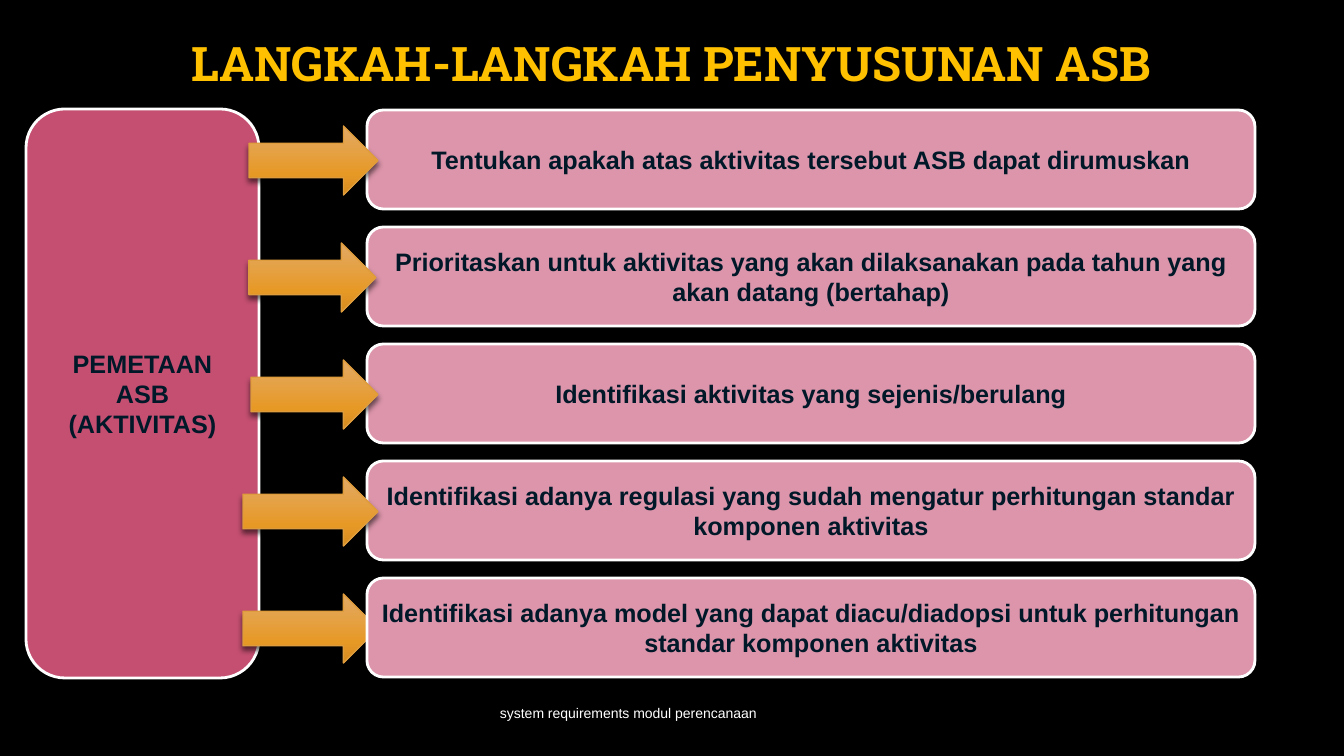
from copy import deepcopy

from pptx import Presentation
from pptx.dml.color import RGBColor
from pptx.enum.shapes import MSO_SHAPE
from pptx.enum.text import MSO_ANCHOR, PP_ALIGN
from pptx.oxml import parse_xml
from pptx.oxml.ns import nsdecls, qn
from pptx.util import Emu, Pt

SLIDE_WIDTH, SLIDE_HEIGHT = 1344, 756
EMU_PER_PX = 12192000 / SLIDE_WIDTH

BLACK = RGBColor(0x00, 0x00, 0x00)
WHITE = RGBColor(0xFF, 0xFF, 0xFF)
GOLD = RGBColor(0xFF, 0xC0, 0x00)
NAVY = RGBColor(0x01, 0x18, 0x29)
ROSE = RGBColor(0xC5, 0x4F, 0x71)
PINK = RGBColor(0xDC, 0x95, 0xAA)
ARROW_EDGE = RGBColor(0xDE, 0x9C, 0x3C)
ARROW_STOPS = [
    (0, RGBColor(0xE2, 0xAA, 0x66)),
    (0.69, RGBColor(0xE7, 0x99, 0x26)),
    (1, RGBColor(0xD6, 0x8B, 0x1F)),
]

TITLE_FONT = {"name": "Roboto Slab", "size": Pt(34), "bold": True}
LABEL_FONT = {"name": "Arial", "size": Pt(18), "bold": True}
FOOTER_FONT = {"name": "Arial", "size": Pt(10), "bold": False}

# Wording, left and right end of the arrow that leads to the step
STEPS = [
    ("Tentukan apakah atas aktivitas tersebut ASB dapat dirumuskan", 249, 378),
    ("Prioritaskan untuk aktivitas yang akan dilaksanakan pada tahun yang "
     "akan datang (bertahap)", 249, 376),
    ("Identifikasi aktivitas yang sejenis/berulang", 251, 378),
    ("Identifikasi adanya regulasi yang sudah mengatur perhitungan standar "
     "komponen aktivitas", 243, 378),
    ("Identifikasi adanya model yang dapat diacu/diadopsi untuk perhitungan "
     "standar komponen aktivitas", 243, 378),
]
STEP_PITCH, STEP_HEIGHT = 117, 99
ARROW_OFFSET, ARROW_HEIGHT = 16, 69


def px(length):
    return Emu(round(length * EMU_PER_PX))


def emu_box(box):
    return [px(length) for length in box]


def write_text(shape, wording, font_format, color, align=PP_ALIGN.CENTER):
    frame = shape.text_frame
    frame_format = {
        "word_wrap": True,
        "vertical_anchor": MSO_ANCHOR.MIDDLE,
        "margin_left": px(9),
        "margin_right": px(9),
    }
    for name, value in frame_format.items():
        setattr(frame, name, value)
    paragraph = frame.paragraphs[0]
    paragraph.alignment = align
    run = paragraph.add_run()
    run.text = wording
    for name, value in font_format.items():
        setattr(run.font, name, value)
    run.font.color.rgb = color


def add_title(slide, box):
    title = slide.shapes.add_textbox(*emu_box(box))
    write_text(title, "LANGKAH-LANGKAH PENYUSUNAN ASB", TITLE_FONT, GOLD)
    title.text_frame.paragraphs[0].line_spacing = 0.9


def add_footer(slide, box):
    footer = slide.shapes.add_textbox(*emu_box(box))
    write_text(footer, "system requirements modul perencanaan", FOOTER_FONT,
               WHITE, PP_ALIGN.LEFT)


def add_panel(slide, box, wording, fill_color):
    panel = slide.shapes.add_shape(MSO_SHAPE.ROUNDED_RECTANGLE, *emu_box(box))
    panel.shadow.inherit = False
    panel.fill.solid()
    panel.fill.fore_color.rgb = fill_color
    panel.line.color.rgb = WHITE
    panel.line.width = Pt(2)
    write_text(panel, wording, LABEL_FONT, NAVY)


def add_arrow(slide, box):
    arrow = slide.shapes.add_shape(MSO_SHAPE.RIGHT_ARROW, *emu_box(box))
    arrow.line.color.rgb = ARROW_EDGE
    arrow.line.width = Pt(1)
    arrow.fill.gradient()
    arrow.fill.gradient_angle = 270
    properties = arrow.element.spPr
    stop_list = properties.find(qn("a:gradFill")).find(qn("a:gsLst"))
    stop_list.append(deepcopy(stop_list[-1]))
    for stop, (position, color) in zip(arrow.fill.gradient_stops, ARROW_STOPS):
        stop.position = position
        stop.color.rgb = color
    properties.append(parse_xml(
        f'<a:effectLst {nsdecls("a")}>'
        f'<a:outerShdw blurRad="{Pt(4)}" dist="{Pt(3)}" dir="5400000" rotWithShape="0">'
        '<a:srgbClr val="000000"><a:alpha val="54000"/></a:srgbClr>'
        '</a:outerShdw></a:effectLst>'))


def add_steps(slide, left, top, width):
    for index, (wording, tail, tip) in enumerate(STEPS):
        step_top = top + index * STEP_PITCH
        step_box = (left, step_top, width, STEP_HEIGHT)
        arrow_box = (tail, step_top + ARROW_OFFSET, tip - tail, ARROW_HEIGHT)
        # The last arrow slides under its step, the others lie on top
        if index == len(STEPS) - 1:
            add_arrow(slide, arrow_box)
            add_panel(slide, step_box, wording, PINK)
        else:
            add_panel(slide, step_box, wording, PINK)
            add_arrow(slide, arrow_box)


def main():
    presentation = Presentation()
    presentation.slide_width = px(SLIDE_WIDTH)
    presentation.slide_height = px(SLIDE_HEIGHT)
    slide = presentation.slides.add_slide(presentation.slide_layouts[6])
    slide.background.fill.solid()
    slide.background.fill.fore_color.rgb = BLACK

    add_title(slide, (101, 28, 1141, 76))
    add_footer(slide, (491, 693, 736, 40))
    add_panel(slide, (26, 109, 233, 569), "PEMETAAN ASB (AKTIVITAS)", ROSE)
    add_steps(slide, left=367, top=110, width=888)
    presentation.save("out.pptx")


if __name__ == "__main__":
    main()
